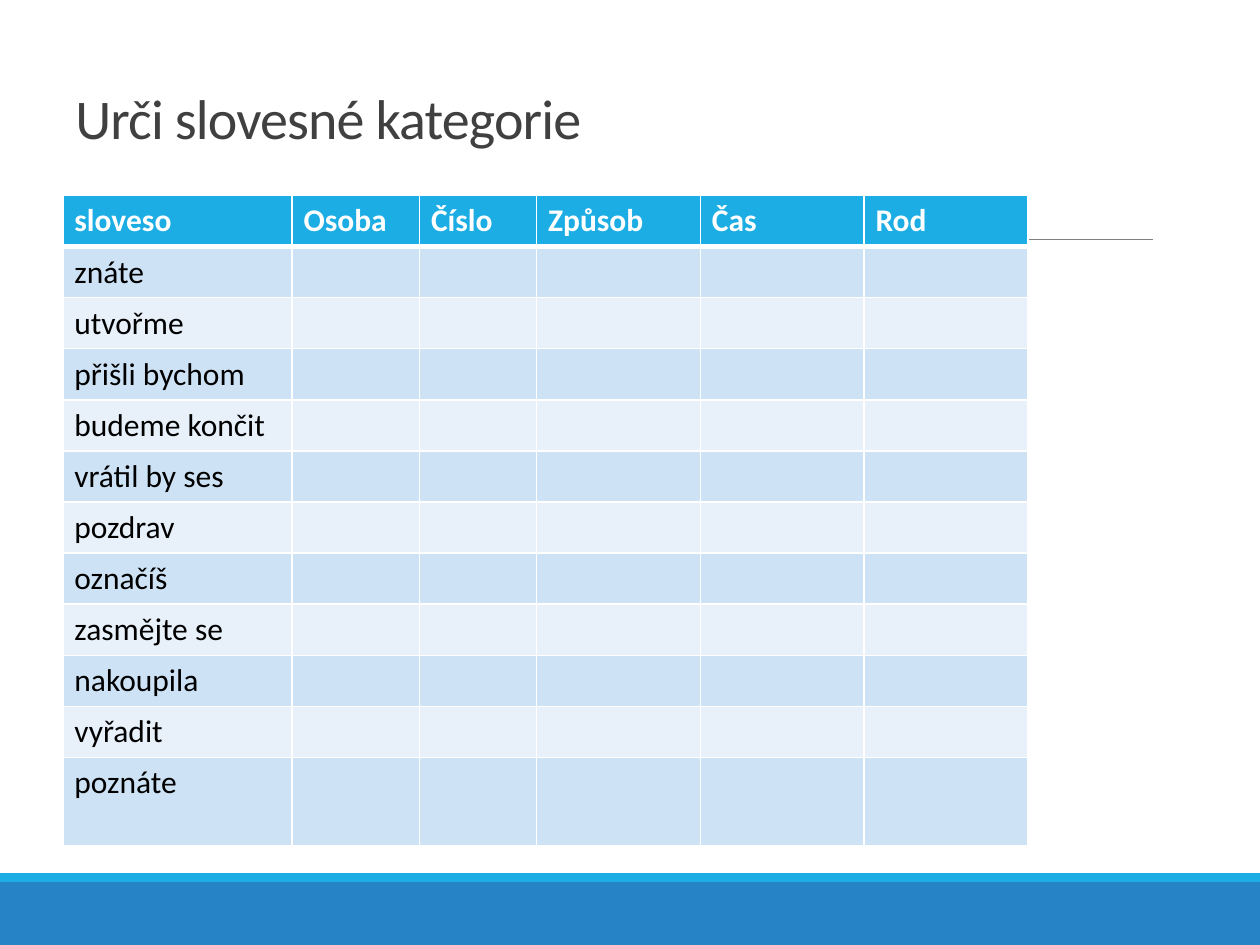
from dataclasses import dataclass

from pptx import Presentation
from pptx.dml.color import RGBColor
from pptx.enum.shapes import MSO_CONNECTOR as Connector, MSO_SHAPE as Shape
from pptx.enum.text import MSO_ANCHOR as Anchor
from pptx.oxml.ns import qn
from pptx.util import Cm, Pt
from lxml.etree import SubElement


@dataclass(frozen=True)
class Theme:
    font: str = "Calibri"
    title_size: float = 32
    table_size: float = 18
    accent: str = "1CADE4"
    footer: str = "2683C6"
    rule: str = "808080"
    title: str = "404040"
    body: str = "000000"
    white: str = "FFFFFF"
    bands: tuple = ("CDE3F5", "E8F1FA")


HEADERS = ["sloveso", "Osoba", "Číslo", "Způsob", "Čas", "Rod"]
VERBS = ["znáte", "utvořme", "přišli bychom", "budeme končit", "vrátil by ses",
         "pozdrav", "označíš", "zasmějte se", "nakoupila", "vyřadit", "poznáte"]
COLUMN_WIDTHS = [4.62, 2.57, 2.36, 3.3, 3.3, 3.3]
ROW_HEIGHT, LAST_ROW_HEIGHT = 1.03, 1.78


def rgb(color):
    return RGBColor.from_string(color)


class SlideBuilder:
    def __init__(self, slide, theme):
        self.s = slide
        self.theme = theme

    def background(self, color):
        fill = self.s.background.fill
        fill.solid()
        fill.fore_color.rgb = rgb(color)

    def bar(self, x, y, w, h, color):
        sp = self.s.shapes.add_shape(Shape.RECTANGLE, Cm(x), Cm(y), Cm(w), Cm(h))
        sp.shadow.inherit = False
        sp.fill.solid()
        sp.fill.fore_color.rgb = rgb(color)
        sp.line.fill.background()

    def rule(self, x1, x2, y):
        line = self.s.shapes.add_connector(
            Connector.STRAIGHT, Cm(x1), Cm(y), Cm(x2), Cm(y))
        line.line.color.rgb = rgb(self.theme.rule)
        line.line.width = Pt(0.5)
        SubElement(line._element.spPr, qn("a:effectLst"))

    def run(self, p, text, size, color, bold=False):
        r = p.add_run()
        r.text = text
        r.font.name = self.theme.font
        r.font.size = Pt(size)
        r.font.bold = bold
        r.font.color.rgb = rgb(color)
        return r

    def title(self, text, x, y, w, h):
        tf = self.s.shapes.add_textbox(Cm(x), Cm(y), Cm(w), Cm(h)).text_frame
        tf.word_wrap = True
        tf.vertical_anchor = Anchor.BOTTOM
        p = tf.paragraphs[0]
        p.line_spacing = 0.85
        r = self.run(p, text, self.theme.title_size, self.theme.title)
        r.font._element.set("spc", "-50")

    def borders(self, cell, bottom):
        """Draw white cell borders; they must precede the fill in the XML."""
        props = cell._tc.get_or_add_tcPr()
        widths = {"a:lnL": 1, "a:lnR": 1, "a:lnT": 1, "a:lnB": bottom}
        for tag, width in widths.items():
            ln = SubElement(props, qn(tag), w=str(Pt(width)))
            fill = SubElement(ln, qn("a:solidFill"))
            SubElement(fill, qn("a:srgbClr"), val=self.theme.white)

    def cell(self, cell, text, fill, color, bold=False, bottom=1):
        self.borders(cell, bottom)
        cell.fill.solid()
        cell.fill.fore_color.rgb = rgb(fill)
        cell.margin_left = cell.margin_right = Cm(0.23)
        cell.margin_top = cell.margin_bottom = Cm(0.13)
        p = cell.text_frame.paragraphs[0]
        p.font.size = Pt(self.theme.table_size)
        if text:
            self.run(p, text, self.theme.table_size, color, bold)

    def verb_table(self, x, y):
        t = self.theme
        heights = [ROW_HEIGHT] * len(VERBS) + [LAST_ROW_HEIGHT]
        table = self.s.shapes.add_table(
            len(heights), len(HEADERS), Cm(x), Cm(y),
            Cm(sum(COLUMN_WIDTHS)), Cm(sum(heights))).table
        for column, width in zip(table.columns, COLUMN_WIDTHS):
            column.width = Cm(width)
        for row, height in zip(table.rows, heights):
            row.height = Cm(height)
        for col, header in enumerate(HEADERS):
            self.cell(table.cell(0, col), header, t.accent, t.white,
                      bold=True, bottom=3)
            for i, verb in enumerate(VERBS):
                self.cell(table.cell(i + 1, col), "" if col else verb,
                          t.bands[i % 2], t.body)


def main():
    theme = Theme()
    prs = Presentation()
    prs.slide_width, prs.slide_height = Cm(25.4), Cm(19.05)
    page = SlideBuilder(prs.slides.add_slide(prs.slide_layouts[6]), theme)
    page.background(theme.white)
    page.bar(0, 17.78, 25.4, 1.27, theme.footer)
    page.bar(0, 17.6, 25.4, 0.18, theme.accent)
    page.rule(2.49, 23.24, 4.83)
    page.title("Urči slovesné kategorie", 1.27, 0.76, 22.86, 2.41)
    page.verb_table(1.27, 3.94)
    prs.save("out.pptx")


if __name__ == "__main__":
    main()
